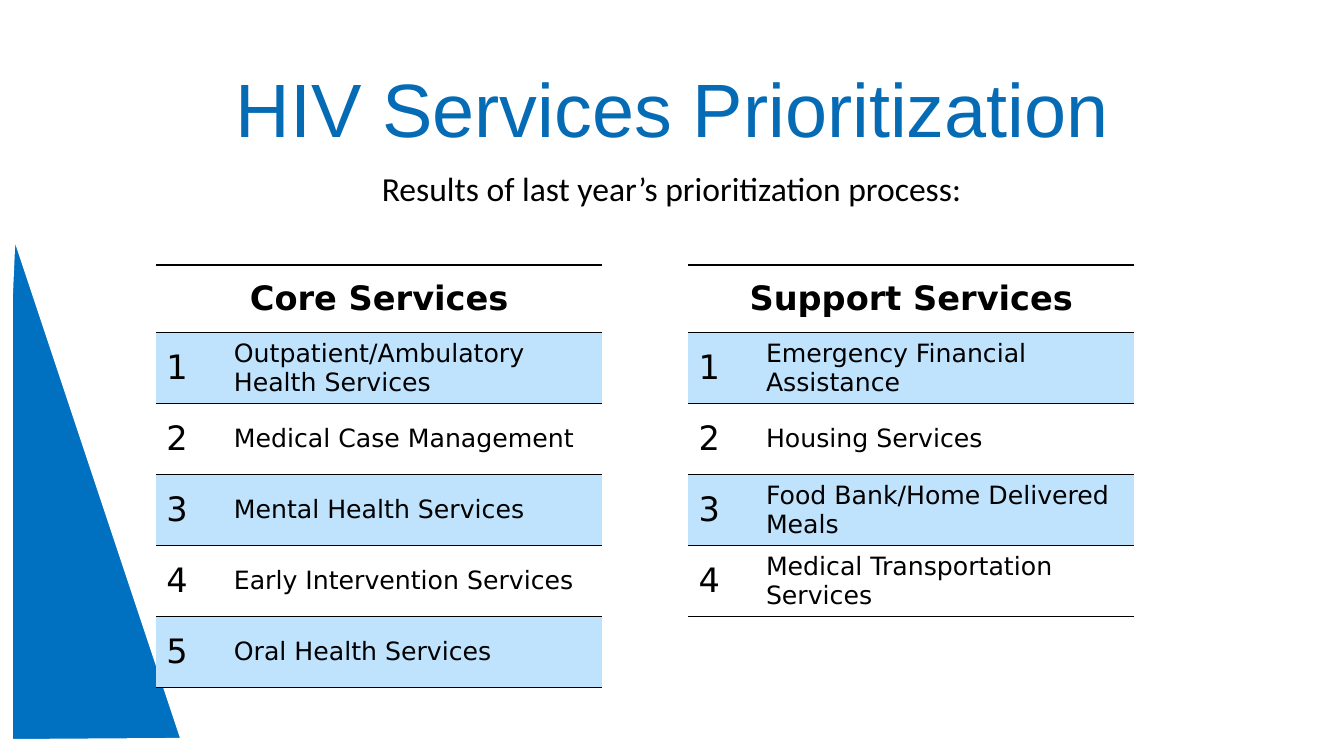
from dataclasses import dataclass

from pptx import Presentation
from pptx.dml.color import RGBColor
from pptx.enum.text import MSO_ANCHOR, PP_ALIGN
from pptx.oxml import parse_xml
from pptx.oxml.ns import nsdecls
from pptx.util import Cm, Pt

BLACK = RGBColor(0x00, 0x00, 0x00)
WHITE = RGBColor(0xFF, 0xFF, 0xFF)
TITLE_BLUE = RGBColor(0x05, 0x6B, 0xB5)
WEDGE_BLUE = RGBColor(0x00, 0x70, 0xC0)
BAND_BLUE = RGBColor(0xC0, 0xE3, 0xFD)

CENTER = PP_ALIGN.CENTER
LEFT = PP_ALIGN.LEFT
MIDDLE = MSO_ANCHOR.MIDDLE

TABLE_FONT = "DejaVu Sans"
TABLE_TOP = Cm(6.68)
COLUMN_WIDTHS = (Cm(1.7), Cm(9.53))
HEADER_HEIGHT = Cm(1.7)
ROW_HEIGHT = Cm(1.79)
RULE = 1
HEAVY_RULE = 2.25
WEDGE_POINTS = ((0.15, 18.8), (0.15, 7.44), (0.25, 5.18), (4.78, 18.77))


@dataclass
class ServiceRanking:
    heading: str
    left: float
    services: tuple[str, ...]


RANKINGS = (
    ServiceRanking("Core Services", 3.94, (
        "Outpatient/Ambulatory Health Services",
        "Medical Case Management",
        "Mental Health Services",
        "Early Intervention Services",
        "Oral Health Services",
    )),
    ServiceRanking("Support Services", 17.35, (
        "Emergency Financial Assistance",
        "Housing Services",
        "Food Bank/Home Delivered Meals",
        "Medical Transportation Services",
    )),
)


def write(paragraph, text: str, size: float, font: str, color: RGBColor,
          align=LEFT, bold: bool = False) -> None:
    paragraph.alignment = align
    run = paragraph.add_run()
    run.text = text
    run.font.size = Pt(size)
    run.font.name = font
    run.font.bold = bold
    run.font.color.rgb = color


def set_borders(cell, top: float) -> None:
    """Rule the top and bottom of a cell and leave its sides open."""
    properties = cell._tc.get_or_add_tcPr()
    sides = (("lnL", 0), ("lnR", 0), ("lnT", top), ("lnB", RULE))
    for index, (tag, width) in enumerate(sides):
        paint = (f'<a:solidFill><a:srgbClr val="{BLACK}"/></a:solidFill>'
                 if width else "<a:noFill/>")
        properties.insert(index, parse_xml(
            f'<a:{tag} {nsdecls("a")} w="{Pt(width)}">{paint}</a:{tag}>'))


def format_cell(cell, text: str, size: float, banded: bool = False,
                header: bool = False) -> None:
    cell.vertical_anchor = MIDDLE
    if banded:
        cell.fill.solid()
        cell.fill.fore_color.rgb = BAND_BLUE
    else:
        cell.fill.background()
    set_borders(cell, HEAVY_RULE if header else RULE)
    if text:
        write(cell.text_frame.paragraphs[0], text, size, TABLE_FONT, BLACK,
              CENTER if header else LEFT, header)


def add_ranking(slide, ranking: ServiceRanking) -> None:
    count = len(ranking.services)
    table = slide.shapes.add_table(
        count + 1, 2, Cm(ranking.left), TABLE_TOP, sum(COLUMN_WIDTHS),
        HEADER_HEIGHT + count * ROW_HEIGHT).table
    table.first_row = False
    table.horz_banding = False
    for column, width in zip(table.columns, COLUMN_WIDTHS):
        column.width = width
    for row in table.rows:
        row.height = ROW_HEIGHT
    table.rows[0].height = HEADER_HEIGHT

    table.cell(0, 0).merge(table.cell(0, 1))
    format_cell(table.cell(0, 0), ranking.heading, 24, header=True)
    format_cell(table.cell(0, 1), "", 24, header=True)
    for rank, service in enumerate(ranking.services, start=1):
        banded = rank % 2 == 1
        format_cell(table.cell(rank, 0), str(rank), 24, banded)
        format_cell(table.cell(rank, 1), service, 18, banded)


def add_wedge(slide) -> None:
    start, *others = [(Cm(x), Cm(y)) for x, y in WEDGE_POINTS]
    builder = slide.shapes.build_freeform(*start)
    builder.add_line_segments(others, close=True)
    wedge = builder.convert_to_shape()
    wedge.shadow.inherit = False
    wedge.fill.solid()
    wedge.fill.fore_color.rgb = WEDGE_BLUE
    wedge.line.color.rgb = WHITE
    wedge.line.width = Pt(10)


def main() -> None:
    presentation = Presentation()
    presentation.slide_width = Cm(33.87)
    presentation.slide_height = Cm(19.05)
    slide = presentation.slides.add_slide(presentation.slide_layouts[5])

    # Title
    title = slide.shapes.title
    title.left, title.top = Cm(2.34), Cm(1.02)
    title.width, title.height = Cm(29.21), Cm(3.68)
    title.text_frame.vertical_anchor = MIDDLE
    heading = title.text_frame.paragraphs[0]
    heading.line_spacing = 0.9
    write(heading, "HIV Services Prioritization", 54, "Arial", TITLE_BLUE, CENTER)

    # Subtitle
    subtitle = slide.shapes.add_textbox(Cm(2.46), Cm(4.22), Cm(28.93), Cm(1.65))
    subtitle.text_frame.word_wrap = True
    summary = subtitle.text_frame.paragraphs[0]
    summary.line_spacing = 0.9
    write(summary, "Results of last year’s prioritization process:", 24,
          "Calibri", BLACK, CENTER)

    # Blue wedge, then the tables over it
    add_wedge(slide)
    for ranking in RANKINGS:
        add_ranking(slide, ranking)

    presentation.save("out.pptx")


if __name__ == "__main__":
    main()
